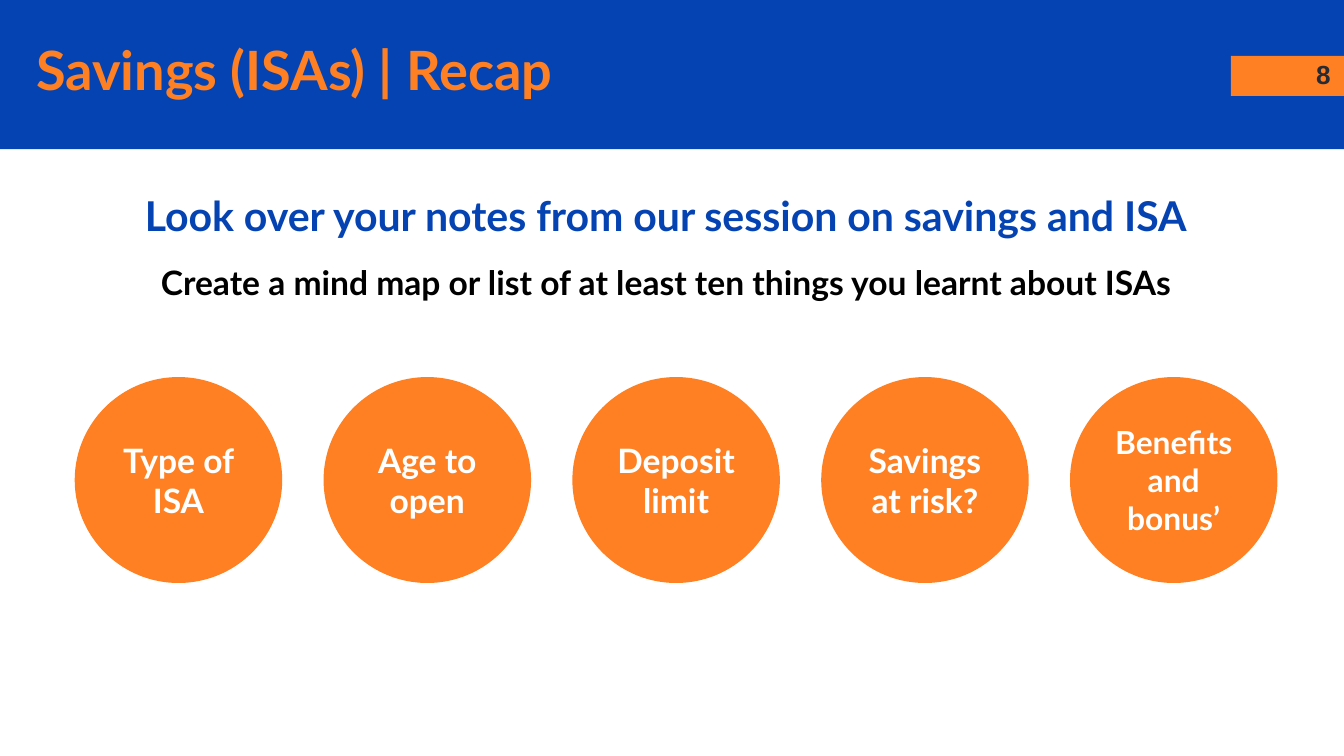
from dataclasses import dataclass

from lxml import etree
from pptx import Presentation
from pptx.dml.color import RGBColor
from pptx.enum.shapes import MSO_SHAPE as Shape
from pptx.enum.text import MSO_ANCHOR as Anchor, MSO_AUTO_SIZE as AutoSize, PP_ALIGN as Align
from pptx.oxml.ns import qn
from pptx.slide import Slide
from pptx.util import Pt

COLORS = {"blue": "0543B3", "orange": "FF8022", "dark": "262A33",
          "black": "000000", "white": "FFFFFF"}
INSET = 7.2


def color(name):
    return RGBColor.from_string(COLORS[name])


@dataclass
class RecapPage:
    page: Slide
    font: str = "Lato"

    def set_text(self, box, lines, align=Align.CENTER, anchor=Anchor.TOP, font=None):
        """Fill a shape with lines of (text, size, color name, space before)."""
        frame = box.text_frame
        sides = ("left", "top", "right", "bottom")
        layout = {f"margin_{side}": Pt(INSET) for side in sides}
        layout |= {"word_wrap": True, "auto_size": AutoSize.NONE, "vertical_anchor": anchor}
        for name, value in layout.items():
            setattr(frame, name, value)
        for index, (text, size, tint, gap) in enumerate(lines):
            para = frame.add_paragraph() if index else frame.paragraphs[0]
            para.alignment, para.space_before = align, Pt(gap)
            span = para.add_run()
            span.text = text
            look = {"name": font or self.font, "size": Pt(size), "bold": True}
            for name, value in look.items():
                setattr(span.font, name, value)
            span.font.color.rgb = color(tint)

    def shape(self, kind, area, tint, outlined=False):
        box = self.page.shapes.add_shape(kind, *map(Pt, area))
        box.shadow.inherit = False
        box.fill.solid()
        box.fill.fore_color.rgb = color(tint)
        if outlined:
            box.line.color.rgb = color(tint)
            box.line.width = Pt(0.75)
        else:
            box.line.fill.background()
        return box

    def placeholder(self, index, area, lines, align):
        """Place a template placeholder in front of the shapes drawn so far."""
        box = self.page.placeholders[index]
        box.element.getparent().append(box.element)
        for name, value in zip(("left", "top", "width", "height"), area):
            setattr(box, name, Pt(value))
        self.set_text(box, lines, align)
        for para in box.text_frame.paragraphs:
            props = para._p.get_or_add_pPr()
            props.set("marL", "0")
            props.set("indent", "0")
            etree.SubElement(props, qn("a:buNone"))

    def page_number(self, area, number):
        box = self.page.shapes.add_textbox(*map(Pt, area))
        self.set_text(box, [(number, 14, "dark", 0)], Align.RIGHT, font="Arial")

    def circle(self, area, text, size):
        box = self.shape(Shape.OVAL, area, "orange", outlined=True)
        self.set_text(box, [(text, size, "white", 0)], anchor=Anchor.MIDDLE)


def main():
    deck = Presentation()
    deck.slide_width, deck.slide_height = Pt(720), Pt(405)
    recap = RecapPage(deck.slides.add_slide(deck.slide_layouts[1]))

    recap.shape(Shape.RECTANGLE, (0, 0, 720, 80), "blue")
    recap.shape(Shape.RECTANGLE, (659.4, 30, 60.6, 21.4), "orange")
    recap.page_number((676.8, 24, 43.2, 31), "8")
    recap.placeholder(1, (16.6, 95, 680.4, 75), [
        ("Look over your notes from our session on savings and ISA", 22, "blue", 0),
        ("Create a mind map or list of at least ten things you learnt about ISAs",
         18, "black", 12),
    ], Align.CENTER)
    recap.placeholder(0, (12.2, 12.2, 535.7, 49.7),
                      [("Savings (ISAs) | Recap", 29, "orange", 0)], Align.LEFT)

    topics = [("Type of ISA", 18), ("Age to open", 18), ("Deposit limit", 18),
              ("Savings at risk?", 18), ("Benefits and bonus’", 17)]
    for column, (text, size) in enumerate(topics):
        recap.circle((40.4 + column * 133.3, 202.4, 110.4, 109.6), text, size)

    deck.save("out.pptx")


if __name__ == "__main__":
    main()
